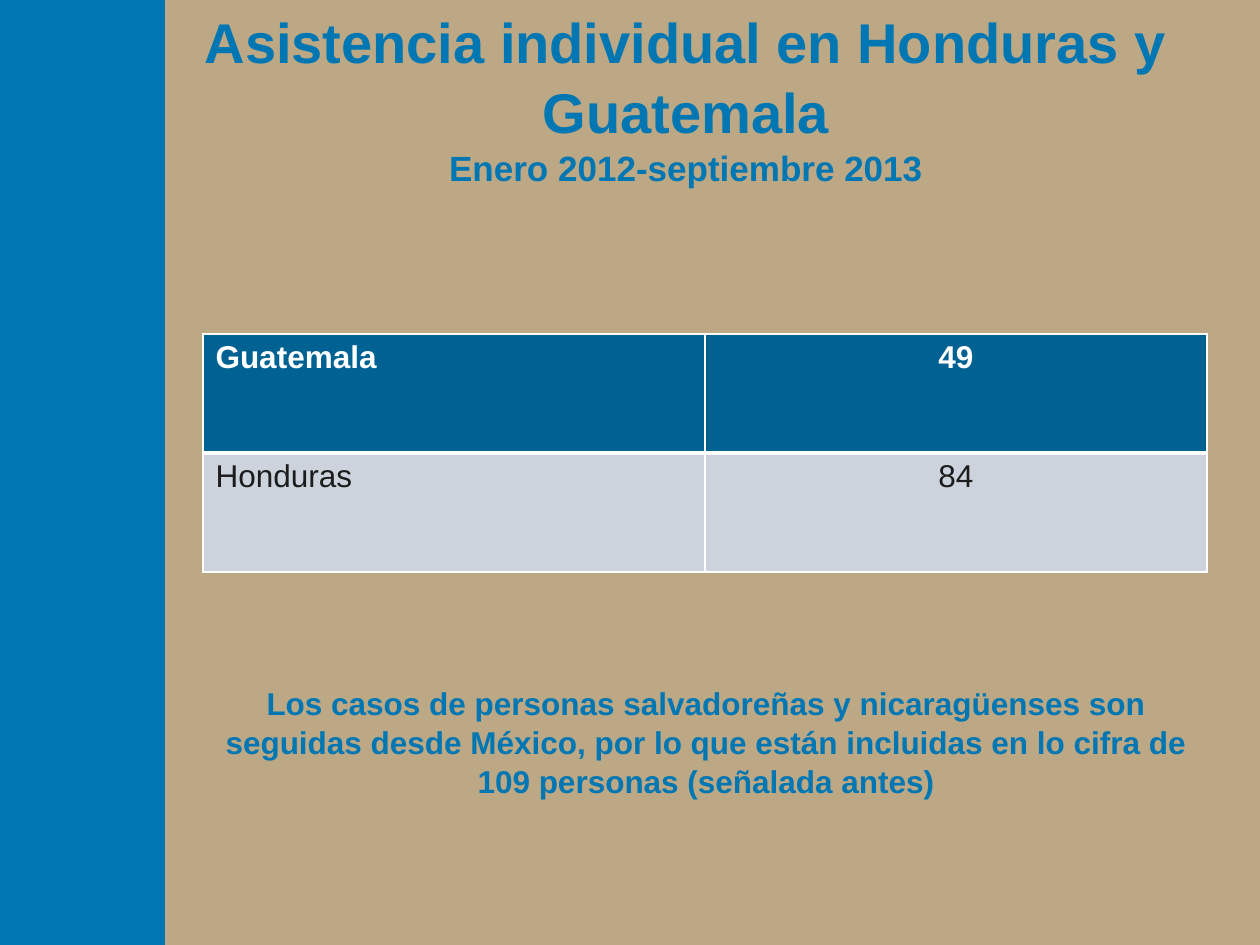
from pptx import Presentation
from pptx.dml.color import RGBColor
from pptx.enum.shapes import MSO_SHAPE
from pptx.enum.text import MSO_ANCHOR, MSO_AUTO_SIZE, PP_ALIGN
from pptx.oxml.ns import qn
from pptx.util import Pt
from lxml.etree import SubElement

PX = 914400 // 126
COLORS = {
    "background": "BDA886",
    "blue": "0077B2",
    "header": "006293",
    "body": "CCD3DC",
    "white": "FFFFFF",
    "dark": "1C1C1C",
}
ROWS = [("Guatemala", "49"), ("Honduras", "84")]


def px(*lengths):
    return [length * PX for length in lengths]


def color(name):
    return RGBColor.from_string(COLORS[name])


def add_run(paragraph, text, size, color_name, bold=True):
    run = paragraph.add_run()
    run.text = text
    run.font.name = "Arial"
    run.font.size = Pt(size)
    run.font.bold = bold
    run.font.color.rgb = color(color_name)


def prepare_frame(shape):
    frame = shape.text_frame
    frame.word_wrap = True
    frame.auto_size = MSO_AUTO_SIZE.NONE
    frame.vertical_anchor = MSO_ANCHOR.MIDDLE
    paragraph = frame.paragraphs[0]
    paragraph.alignment = PP_ALIGN.CENTER
    paragraph.line_spacing = 1.04
    return paragraph


def add_side_band(slide):
    band = slide.shapes.add_shape(MSO_SHAPE.RECTANGLE, *px(0, 0, 165, 945))
    band.shadow.inherit = False
    band.fill.solid()
    band.fill.fore_color.rgb = color("blue")
    band.line.fill.background()


def fill_title(slide):
    title = slide.shapes.title
    title.left, title.top, title.width, title.height = px(184, 18, 1004, 158)
    paragraph = prepare_frame(title)
    add_run(paragraph, "Asistencia individual en Honduras y Guatemala", 32, "blue")
    paragraph.add_line_break()
    add_run(paragraph, "Enero 2012-septiembre 2013", 20, "blue")


def set_borders(cell, widths):
    properties = cell._tc.get_or_add_tcPr()
    for side, width in widths.items():
        line = SubElement(properties, qn(f"a:ln{side}"), w=str(Pt(width)))
        fill = SubElement(line, qn("a:solidFill"))
        SubElement(fill, qn("a:srgbClr"), val=COLORS["white"])


def format_cell(cell, text, is_header, is_number):
    top, bottom = (1, 3) if is_header else (3, 1)
    set_borders(cell, {"L": 1, "R": 1, "T": top, "B": bottom})
    cell.fill.solid()
    cell.fill.fore_color.rgb = color("header" if is_header else "body")
    paragraph = cell.text_frame.paragraphs[0]
    paragraph.alignment = PP_ALIGN.CENTER if is_number else PP_ALIGN.LEFT
    add_run(paragraph, text, 18, "white" if is_header else "dark", is_header)


def add_country_table(slide):
    frame = slide.shapes.add_table(len(ROWS), 2, *px(203, 334, 1004, 238))
    for row, texts in enumerate(ROWS):
        for column, text in enumerate(texts):
            format_cell(frame.table.cell(row, column), text, row == 0, column == 1)


def add_note(slide):
    box = slide.shapes.add_textbox(*px(204, 662, 1004, 158))
    paragraph = prepare_frame(box)
    add_run(
        paragraph,
        "Los casos de personas salvadoreñas y nicaragüenses son seguidas desde "
        "México, por lo que están incluidas en lo cifra de 109 personas "
        "(señalada antes)",
        18,
        "blue",
    )


def main():
    presentation = Presentation()
    presentation.slide_width, presentation.slide_height = px(1260, 945)
    slide = presentation.slides.add_slide(presentation.slide_layouts[5])
    slide.background.fill.solid()
    slide.background.fill.fore_color.rgb = color("background")
    add_side_band(slide)
    fill_title(slide)
    add_country_table(slide)
    add_note(slide)
    presentation.save("out.pptx")


if __name__ == "__main__":
    main()
